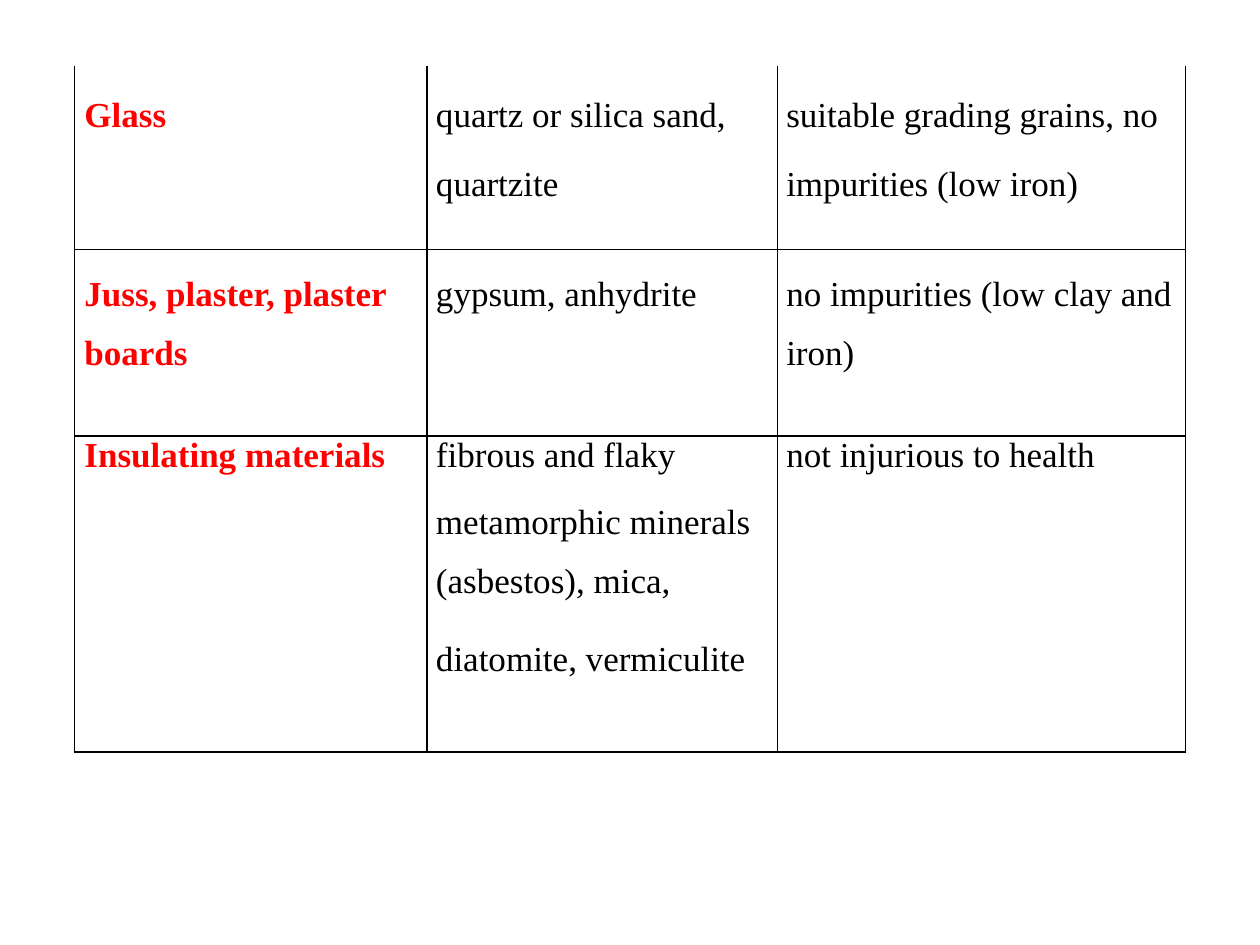
"""Build a slide with a table of building materials, their minerals and needs."""
import pptx
import pptx.dml.color
import pptx.enum.text
import pptx.oxml
import pptx.oxml.ns
import pptx.util
from pptx.util import Inches

THEME = {
    "font": "Times New Roman",
    "size": 20,
    "name": "FF0000",
    "body": "000000",
    "line": "000000",
    "rule": 1,
}
GROUPS = [
    [
        (0.55, "Glass", "quartz or silica sand,", "suitable grading grains, no"),
        (0.55, "", "quartzite", "impurities (low iron)"),
        (0.36, "", "", ""),
    ],
    [
        (0.51, "Juss, plaster, plaster", "gypsum, anhydrite", "no impurities (low clay and"),
        (0.47, "boards", "", "iron)"),
        (0.5, "", "", ""),
    ],
    [
        (0.31, "Insulating materials", "fibrous and flaky", "not injurious to health"),
        (0.53, "", "metamorphic minerals", ""),
        (0.47, "", "(asbestos), mica,", ""),
        (0.62, "", "diatomite, vermiculite", ""),
        (0.58, "", "", ""),
    ],
]
COLS = [2.8, 2.78, 3.24]
LEFT, TOP = 0.59, 0.52
LOOSE = {"boards", "(asbestos), mica,", "diatomite, vermiculite"}


def write(cell, text, color, bold=False, indent=0.07, pitch=None):
    """Put formatted text at the foot of a cell."""
    cell.margin_left = cell.margin_right = cell.margin_top = cell.margin_bottom = 0
    cell.vertical_anchor = pptx.enum.text.MSO_ANCHOR.BOTTOM
    para = cell.text_frame.paragraphs[0]
    para.font.size = pptx.util.Pt(THEME["size"])
    if not text:
        return
    props = para._p.get_or_add_pPr()
    props.set("marL", str(Inches(indent)))
    props.set("indent", "0")
    if pitch:
        para.line_spacing = pptx.util.Pt(pitch)
    run = para.add_run()
    run.text = text
    run.font.name = THEME["font"]
    run.font.size = pptx.util.Pt(THEME["size"])
    run.font.bold = bold
    run.font.color.rgb = pptx.dml.color.RGBColor.from_string(color)


def frame(cell, edges):
    """Rule the named edges of a cell and clear the others and its fill."""
    props = cell._tc.get_or_add_tcPr()
    for edge in "LRTB":
        paint = "<a:noFill/>"
        if edge in edges:
            paint = f'<a:solidFill><a:srgbClr val="{THEME["line"]}"/></a:solidFill>'
        width = pptx.util.Pt(THEME["rule"])
        space = pptx.oxml.ns.nsdecls("a")
        props.append(pptx.oxml.parse_xml(f'<a:ln{edge} {space} w="{width}">{paint}</a:ln{edge}>'))
    cell.fill.background()


def main():
    """Lay out the table and save the slide."""
    deck = pptx.Presentation()
    deck.slide_width, deck.slide_height = Inches(10), Inches(7.5)
    slide = deck.slides.add_slide(deck.slide_layouts[6])
    rows = [
        (row, at == 0 and group is not GROUPS[0], at == len(group) - 1)
        for group in GROUPS
        for at, row in enumerate(group)
    ]
    high = sum(row[0] for row, _, _ in rows)
    table = slide.shapes.add_table(
        len(rows), len(COLS), Inches(LEFT), Inches(TOP), Inches(sum(COLS)), Inches(high)
    ).table
    table.first_row = table.horz_banding = False
    for col, width in zip(table.columns, COLS):
        col.width = Inches(width)
    for r, ((height, *texts), first, last) in enumerate(rows):
        table.rows[r].height = Inches(height)
        for c, text in enumerate(texts):
            cell = table.cell(r, c)
            name = c == 0
            pitch = 15.9 if name else 15.7 if any(texts[:1]) and text not in ("iron)",) else 15.8
            write(
                cell,
                text,
                THEME["name"] if name else THEME["body"],
                bold=name,
                indent=0.08 if name else 0.07,
                pitch=None if text in LOOSE else pitch,
            )
            frame(cell, "LR" + "T" * first + "B" * last)
    deck.save("out.pptx")


if __name__ == "__main__":
    main()
